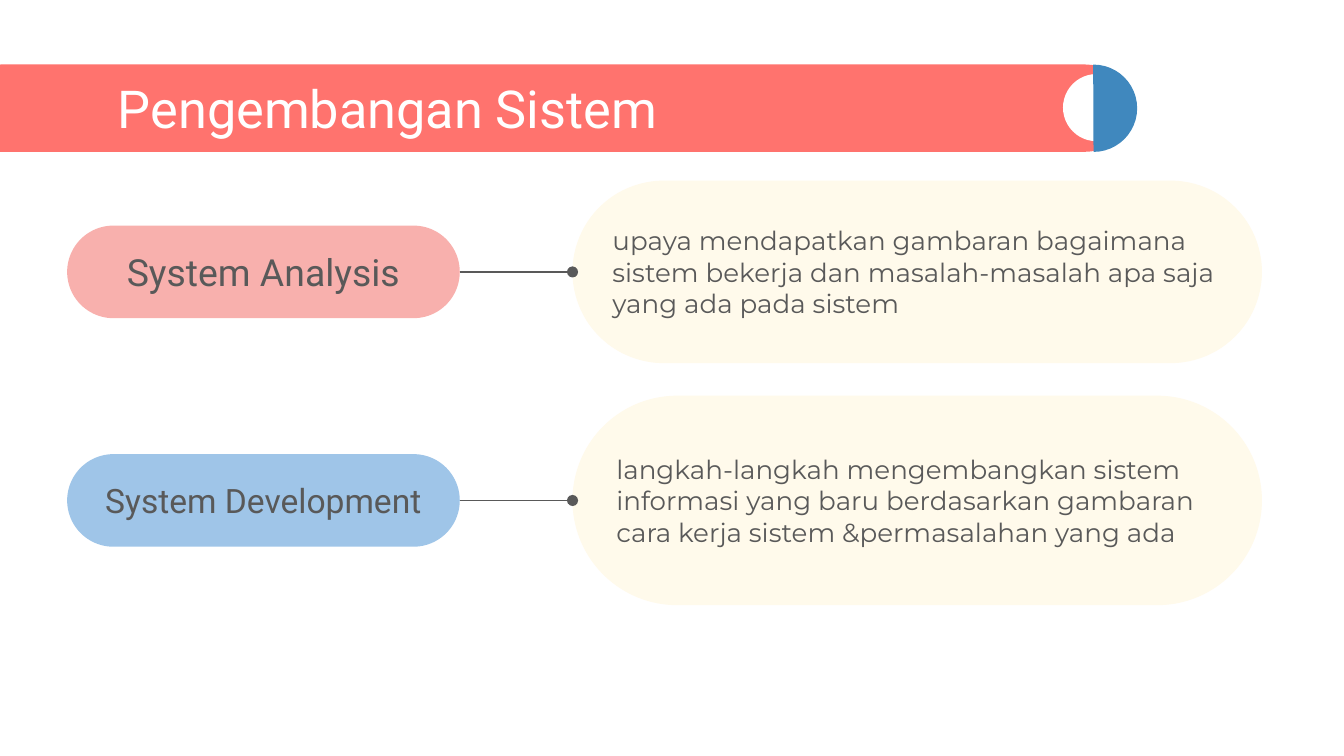
from lxml import etree
from pptx import Presentation
from pptx.dml.color import RGBColor
from pptx.enum.shapes import MSO_CONNECTOR, MSO_SHAPE
from pptx.enum.text import MSO_ANCHOR, PP_ALIGN
from pptx.oxml.ns import qn
from pptx.util import Cm, Pt

PILL = MSO_SHAPE.ROUNDED_RECTANGLE
OVAL = MSO_SHAPE.OVAL
PIE = MSO_SHAPE.PIE
STRAIGHT = MSO_CONNECTOR.STRAIGHT
MIDDLE = MSO_ANCHOR.MIDDLE
LEFT = PP_ALIGN.LEFT
CENTER = PP_ALIGN.CENTER

color = RGBColor.from_string
GRAY = "595959"
CREAM = "FFFAEB"

presentation = Presentation()
presentation.slide_width = Cm(25.4)
presentation.slide_height = Cm(14.29)
slide = presentation.slides.add_slide(presentation.slide_layouts[6])


def add_filled_shape(kind, left, top, width, height, fill, adjustments=()):
    shape = slide.shapes.add_shape(kind, Cm(left), Cm(top), Cm(width), Cm(height))
    shape.shadow.inherit = False
    shape.fill.solid()
    shape.fill.fore_color.rgb = color(fill)
    shape.line.fill.background()
    for index, value in enumerate(adjustments):
        shape.adjustments[index] = value
    return shape


def set_text(shape, text, font_name, size, text_color, alignment):
    frame = shape.text_frame
    frame.word_wrap = True
    frame.vertical_anchor = MIDDLE
    frame.margin_left = frame.margin_right = Cm(0.25)
    frame.margin_top = frame.margin_bottom = Cm(0.25)
    frame.text = text
    paragraph = frame.paragraphs[0]
    paragraph.alignment = alignment
    font = paragraph.runs[0].font
    font.name = font_name
    font.size = Pt(size)
    font.color.rgb = color(text_color)


add_filled_shape(PILL, -0.81, 1.22, 22.15, 1.65, "FF736E", [0.5])
add_filled_shape(OVAL, 20.09, 1.4, 1.27, 1.27, "FFFFFF")
half_disc = add_filled_shape(PIE, 19.84, 1.22, 1.65, 1.65, "4088BE", [53.67, 162])
half_disc.rotation = 180

title = slide.shapes.add_textbox(Cm(1.98), Cm(1.52), Cm(17.7), Cm(1.04))
set_text(title, "Pengembangan Sistem", "Roboto", 28, "FFFFFF", LEFT)

label_left, label_width, label_height = 1.27, 7.42, 1.75
detail_left, detail_width = 10.82, 13.03

rows = [
    (5.14, "System Analysis", 20, "F8B0AD", 3.45,
     "upaya mendapatkan gambaran bagaimana sistem bekerja dan "
     "masalah-masalah apa saja yang ada pada sistem"),
    (9.46, "System Development", 18, "9FC5E8", 3.96,
     "langkah-langkah mengembangkan sistem informasi yang baru berdasarkan "
     "gambaran cara kerja sistem &permasalahan yang ada"),
]

for middle, name, size, fill, detail_height, description in rows:
    label = add_filled_shape(PILL, label_left, middle - label_height / 2,
                             label_width, label_height, fill, [0.5])
    set_text(label, name, "Roboto", size, GRAY, CENTER)

    detail = add_filled_shape(PILL, detail_left, middle - detail_height / 2,
                              detail_width, detail_height, CREAM, [0.5])
    set_text(detail, description, "Montserrat", 14, GRAY, LEFT)

    connector = slide.shapes.add_connector(
        STRAIGHT, Cm(label_left + label_width), Cm(middle), Cm(detail_left), Cm(middle))
    connector.line.color.rgb = color(GRAY)
    connector.line.width = Pt(0.75)
    line = connector.line._get_or_add_ln()
    etree.SubElement(line, qn("a:tailEnd"), type="oval")
    etree.SubElement(connector._element.spPr, qn("a:effectLst"))

presentation.save("out.pptx")
